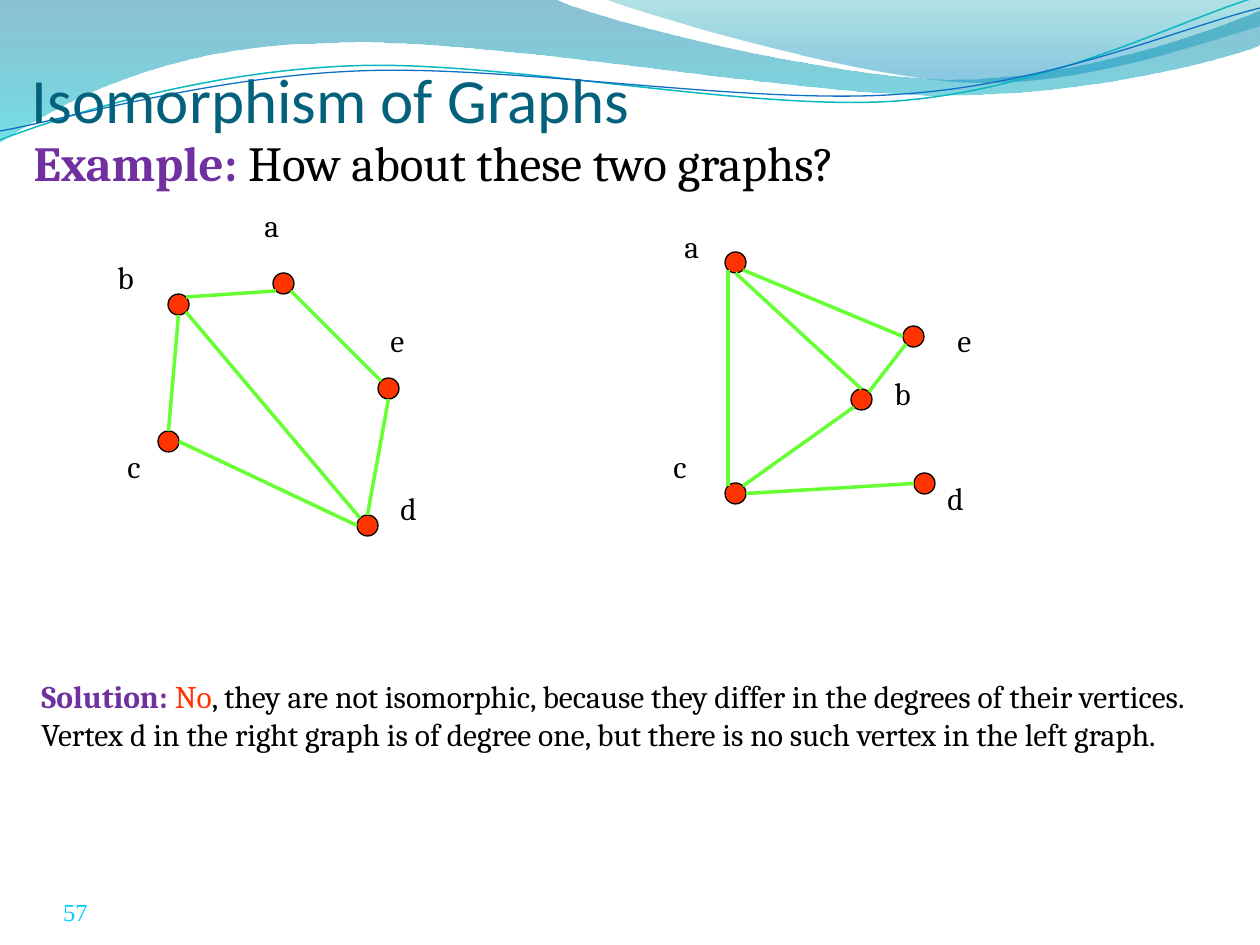
import math
import pptx
import pptx.util
import pptx.dml.color
import pptx.enum.shapes
import pptx.enum.text
import pptx.oxml
import pptx.oxml.ns

PX = 914400 // 126  # one px in EMU
HEX = {"title": "04617B", "lead": "7030A0", "text": "000000", "node": "FF3300",
       "edge": "66FF33", "page": "00CCFF", "teal": "0AB8BF", "blue": "0F6FC6"}

# Wave outlines: a start point, then lines (one point) and curves (three points)
BANDS = [
    {"pts": [[(0, 0)], [(554, -1)],
             [(600, 21), (837, 79), (955, 79)], [(1075, 79), (1207, 33), (1260, 11)],
             [(1261, 45)],
             [(1239, 55), (1096, 96), (940, 95)], [(784, 95), (481, 35), (324, 43)],
             [(163, 45), (58, 105), (-1, 142)]],
     "stops": [(0, "0074A1", 45), (1, "00C6CF", 55)]},
    {"pts": [[(604, -1)],
             [(641, 14), (859, 78), (969, 82)], [(1079, 87), (1211, 40), (1260, 26)],
             [(1260, 0)]],
     "stops": [(0, "00A1A9", 30), (0.8, "008BBF", 45)]},
]
TILT = 2.7  # degrees, counterclockwise
CURVES = [
    {"pts": [[(0, 140)], [(60, 117), (199, 72), (349, 66)],
             [(498, 59), (747, 112), (898, 101)], [(1050, 89), (1182, 19), (1257, -3)]],
     "mid": (629, 72), "color": "teal", "width": 0.85},
    {"pts": [[(0, 131)], [(59, 121), (207, 77), (357, 71)],
             [(508, 64), (752, 106), (903, 94)], [(1053, 84), (1186, 26), (1260, 8)]],
     "mid": (629, 74), "color": "blue", "width": 0.75},
]

# Texts: runs of (words, format)
TITLE = [("Isomorphism of Graphs", {"size": 36, "name": "Calibri", "color": "title"})]
EXAMPLE = [("Example: ", {"size": 28, "color": "lead", "bold": True}),
           ("How about these two graphs?", {"size": 28})]
ANSWER = [("Solution: ", {"color": "lead", "bold": True}),
          ("No", {"color": "node"}),
          (", they are not isomorphic, because they differ in the degrees of their "
           "vertices. Vertex d in the right graph is of degree one, but there is no "
           "such vertex in the left graph.", {})]
PAGE = [("57", {"size": 14, "name": "Times New Roman", "color": "page"})]

# Graphs: left-top corner of each node and label; edges name node and compass side
SIZE = 21
WIDE = {"a": 84, "b": 42, "c": 53, "d": 84, "e": 84}
GRAPHS = [
    {"nodes": {"d": (357, 515), "c": (158, 431), "b": (168, 294),
               "e": (378, 378), "a": (273, 273)},
     "labels": {"d": (388, 483), "a": (252, 200), "b": (105, 252),
                "c": (115, 441), "e": (378, 315)},
     "edges": ["d:n e:s", "d:w c:e", "c:n b:s", "b:ne a:sw", "a:se e:nw", "b:se d:nw"]},
    {"nodes": {"c": (725, 483), "b": (851, 389), "a": (725, 252),
               "d": (914, 473), "e": (903, 326)},
     "labels": {"d": (935, 473), "a": (672, 221), "b": (882, 368),
                "c": (661, 441), "e": (945, 315)},
     "edges": ["c:e d:w", "c:ne b:sw", "b:n a:s", "a:se e:w", "e:sw b:ne", "a:sw c:nw"]},
]


def emu(*vals):
    return [round(v * PX) for v in vals]


def rgb(name):
    return pptx.dml.color.RGBColor.from_string(HEX.get(name, name))


def add_tag(parent, tag, attrs=""):
    node = pptx.oxml.parse_xml(f"<a:{tag} {pptx.oxml.ns.nsdecls('a')} {attrs}/>")
    parent.append(node)
    return node


def write(frame, runs, **form):
    look = {"word_wrap": True, "auto_size": pptx.enum.text.MSO_AUTO_SIZE.NONE, **form}
    for key, val in look.items():
        setattr(frame, key, val)
    para = frame.paragraphs[0]
    para.alignment = pptx.enum.text.PP_ALIGN.LEFT
    para.space_before = pptx.util.Pt(0)
    for words, extra in runs:
        run = para.add_run()
        run.text = words
        font = {"size": 18, "name": "Cambria", "color": "text", "bold": False, **extra}
        run.font.color.rgb = rgb(font.pop("color"))
        font["size"] = pptx.util.Pt(font["size"])
        for key, val in font.items():
            setattr(run.font, key, val)
    return para


def place(shape, *box):
    for key, val in zip(("left", "top", "width", "height"), emu(*box)):
        setattr(shape, key, val)
    shape.element.getparent().append(shape.element)  # bring to front


def add_wave(shapes, pts, close):
    """Draw through all points, then bend each group of three into a curve."""
    first, *rest = [emu(*p) for part in pts for p in part]
    pen = shapes.build_freeform(*first)
    pen.add_line_segments(rest, close=close)
    wave = pen.convert_to_shape()
    wave.shadow.inherit = False
    steps = iter(wave.element.findall(".//" + pptx.oxml.ns.qn("a:lnTo")))
    for part in pts[1:]:
        group = [next(steps) for _ in part]
        if len(group) == 3:
            bend = add_tag(group[0].getparent(), "cubicBezTo")
            group[0].addprevious(bend)
            for step in group:
                bend.append(step[0])
                step.getparent().remove(step)
    return wave


def add_band(shapes, band):
    wave = add_wave(shapes, band["pts"], True)
    wave.line.fill.background()
    wave.fill.gradient()
    wave.fill.gradient_angle = 270
    for stop, (pos, color, alpha) in zip(wave.fill.gradient_stops, band["stops"]):
        stop.position = pos
        stop.color.rgb = rgb(color)
        add_tag(stop._gs[0], "alpha", f'val="{alpha * 1000}"')


def turn(point, mid):
    dx, dy = point[0] - mid[0], point[1] - mid[1]
    cos, sin = math.cos(math.radians(TILT)), math.sin(math.radians(TILT))
    return mid[0] + dx * cos - dy * sin, mid[1] + dx * sin + dy * cos


def add_curve(shapes, curve):
    pts = [[turn(p, curve["mid"]) for p in part] for part in curve["pts"]]
    wave = add_wave(shapes, pts, False)
    wave.rotation = 360 - TILT
    wave.fill.background()
    wave.line.color.rgb = rgb(curve["color"])
    wave.line.width = pptx.util.Pt(curve["width"])


def side(corner, way):
    """Point on a node's rim in a compass direction."""
    half = SIZE / 2
    reach = half * (0.71 if len(way) == 2 else 1)
    return (corner[0] + half + reach * (("e" in way) - ("w" in way)),
            corner[1] + half + reach * (("s" in way) - ("n" in way)))


def add_graph(slide, graph):
    shapes = slide.shapes.add_group_shape().shapes
    for corner in graph["nodes"].values():
        kind = pptx.enum.shapes.MSO_SHAPE.FLOWCHART_CONNECTOR
        node = shapes.add_shape(kind, *emu(*corner, SIZE, SIZE))
        node.shadow.inherit = False
        node.fill.solid()
        node.fill.fore_color.rgb = rgb("node")
        node.line.color.rgb = rgb("text")
        node.line.width = pptx.util.Pt(0.75)
    for name, spot in graph["labels"].items():
        box = shapes.add_textbox(*emu(*spot, WIDE[name], 72))
        grow = pptx.enum.text.MSO_AUTO_SIZE.SHAPE_TO_FIT_TEXT
        write(box.text_frame, [(name, {})], auto_size=grow)
    for edge in graph["edges"]:
        ends = [end.split(":") for end in edge.split()]
        (x1, y1), (x2, y2) = [side(graph["nodes"][n], way) for n, way in ends]
        kind = pptx.enum.shapes.MSO_CONNECTOR.STRAIGHT
        line = shapes.add_connector(kind, *emu(x1, y1, x2, y2))
        line.line.color.rgb = rgb("edge")
        line.line.width = pptx.util.Pt(2)
        add_tag(line.element.spPr, "effectLst")


def main():
    deck = pptx.Presentation()
    deck.slide_width, deck.slide_height = emu(1260, 945)
    slide = deck.slides.add_slide(deck.slide_layouts[1])
    shapes = slide.shapes
    flat = {"margin_left": 0, "margin_right": 0, "margin_bottom": 0,
            "vertical_anchor": pptx.enum.text.MSO_ANCHOR.BOTTOM}

    # Waves at the top
    for band in BANDS:
        add_band(shapes, band)
    pair = shapes.add_group_shape().shapes
    for curve in CURVES:
        add_curve(pair, curve)

    # Page number, title and question
    page = shapes.add_textbox(*emu(63, 876, 294, 50))
    write(page.text_frame, PAGE, margin_top=0, **flat)
    title, body = shapes.title, slide.placeholders[1]
    place(title, 32, 0, 1186, 136)
    write(title.text_frame, TITLE, **flat)
    place(body, 21, 126, 1218, 73)
    props = write(body.text_frame, EXAMPLE)._p.get_or_add_pPr()
    props.set("marL", "0")
    props.set("indent", "0")
    add_tag(props, "buNone")

    # Graphs and answer
    for graph in GRAPHS:
        add_graph(slide, graph)
    answer = shapes.add_textbox(*emu(29, 671, 1207, 189))
    write(answer.text_frame, ANSWER)

    deck.save("out.pptx")


if __name__ == "__main__":
    main()
